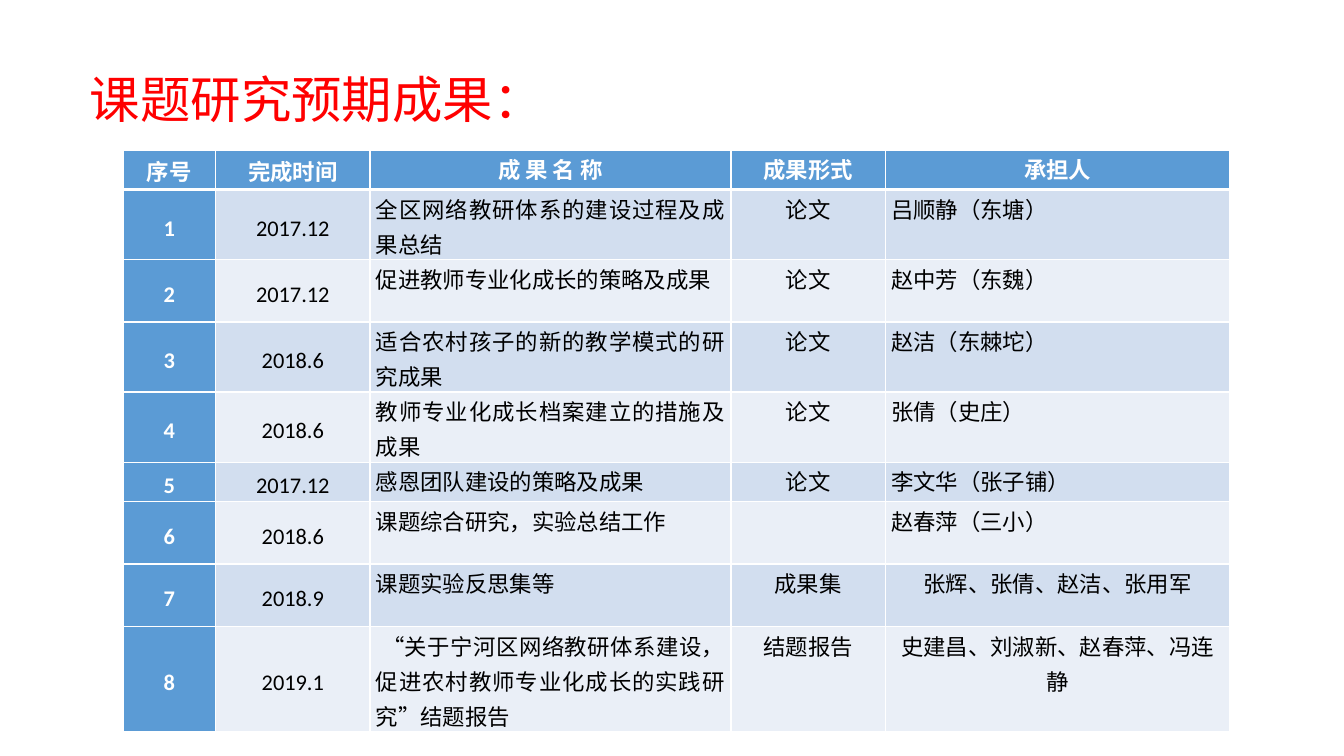
from lxml import etree
from pptx import Presentation
from pptx.dml.color import RGBColor
from pptx.enum.text import MSO_ANCHOR, MSO_AUTO_SIZE, PP_ALIGN
from pptx.oxml.ns import qn
from pptx.util import Inches, Pt

CENTER, JUSTIFY, LEFT = PP_ALIGN.CENTER, PP_ALIGN.JUSTIFY, PP_ALIGN.LEFT
TOP, MIDDLE = MSO_ANCHOR.TOP, MSO_ANCHOR.MIDDLE
FIT_SHAPE = MSO_AUTO_SIZE.SHAPE_TO_FIT_TEXT

RED = RGBColor(0xFF, 0x00, 0x00)
WHITE = RGBColor(0xFF, 0xFF, 0xFF)
BLACK = RGBColor(0x00, 0x00, 0x00)
BLUE = RGBColor(0x5B, 0x9B, 0xD5)
BANDS = RGBColor(0xD2, 0xDE, 0xEF), RGBColor(0xEA, 0xEF, 0xF7)

HEADINGS = "序号", "完成时间", "成 果 名 称", "成果形式", "承担人"
RESULTS = [
    ("2017.12", "全区网络教研体系的建设过程及成果总结", "论文", "吕顺静（东塘）"),
    ("2017.12", "促进教师专业化成长的策略及成果", "论文", "赵中芳（东魏）"),
    ("2018.6", "适合农村孩子的新的教学模式的研究成果", "论文", "赵洁（东棘坨）"),
    ("2018.6", "教师专业化成长档案建立的措施及成果", "论文", "张倩（史庄）"),
    ("2017.12", "感恩团队建设的策略及成果", "论文", "李文华（张子铺）"),
    ("2018.6", "课题综合研究，实验总结工作", "", "赵春萍（三小）"),
    ("2018.9", "课题实验反思集等", "成果集", "张辉、张倩、赵洁、张用军"),
    ("2019.1", " “关于宁河区网络教研体系建设，促进农村教师专业化成长的实践研究”结题报告",
     "结题报告", "史建昌、刘淑新、赵春萍、冯连静"),
]
COLUMN_SHARES = 6.9, 11.48, 26.86, 11.48, 25.66
ONE_LINE, TWO_LINES, THREE_LINES = 5.2, 8.27, 12.4
ROW_SHARES = [ONE_LINE, *[TWO_LINES] * 4, ONE_LINE, *[TWO_LINES] * 2, THREE_LINES]


class ResultsSlide:
    """Draws on one title-only slide, with lengths in percent of its size."""

    font_name = "Calibri"

    def __init__(self, deck):
        self.width, self.height = deck.slide_width, deck.slide_height
        self.slide = deck.slides.add_slide(deck.slide_layouts[5])

    def across(self, share):
        return round(self.width * share / 100)

    def down(self, share):
        return round(self.height * share / 100)

    def style(self, paragraph, size, color, align, bold=False):
        paragraph.alignment = align
        font = paragraph.font
        font.name, font.size, font.bold = self.font_name, Pt(size), bold
        font.color.rgb = color

    def title(self, wording, left, top, width, height):
        heading = self.slide.shapes.title
        heading.left, heading.top = self.across(left), self.down(top)
        heading.width, heading.height = self.across(width), self.down(height)
        frame = heading.text_frame
        frame.text = wording
        frame.word_wrap = False
        frame.auto_size = FIT_SHAPE
        frame.vertical_anchor = TOP
        self.style(frame.paragraphs[0], 36, RED, LEFT)

    def border(self, cell, side, points):
        properties = cell._tc.get_or_add_tcPr()
        line = etree.SubElement(properties, qn(f"a:ln{side}"), w=str(Pt(points)))
        fill = etree.SubElement(line, qn("a:solidFill"))
        etree.SubElement(fill, qn("a:srgbClr"), val=str(WHITE))

    def cell(self, cell, wording, row, column):
        is_header = row == 0
        is_label = is_header or column == 0
        for side in "LRTB":
            is_rule = (is_header and side == "B") or (row == 1 and side == "T")
            self.border(cell, side, 3 if is_rule else 1)
        cell.fill.solid()
        cell.fill.fore_color.rgb = BLUE if is_label else BANDS[(row - 1) % 2]
        if not wording:
            return
        cell.margin_left = cell.margin_right = Inches(0.06)
        cell.margin_top = cell.margin_bottom = 0
        cell.vertical_anchor = MIDDLE if column < 2 else TOP
        cell.text = wording
        paragraph = cell.text_frame.paragraphs[0]
        paragraph.line_spacing = Pt(25)
        single_author = column == 4 and "、" not in wording
        justified = not is_header and (column == 2 or single_author)
        self.style(paragraph, 16, WHITE if is_label else BLACK,
                   JUSTIFY if justified else CENTER, is_label)

    def table(self, rows, left, top, column_shares, row_shares):
        table = self.slide.shapes.add_table(
            len(rows), len(column_shares), self.across(left), self.down(top),
            self.across(sum(column_shares)), self.down(sum(row_shares))).table
        table.first_col = True
        for column, share in zip(table.columns, column_shares):
            column.width = self.across(share)
        for row, share in zip(table.rows, row_shares):
            row.height = self.down(share)
        for r, row in enumerate(rows):
            for c, wording in enumerate(row):
                self.cell(table.cell(r, c), wording, r, c)


def main():
    deck = Presentation()
    deck.slide_width, deck.slide_height = Inches(13.33), Inches(7.5)
    page = ResultsSlide(deck)
    numbered = [(str(n), *result) for n, result in enumerate(RESULTS, 1)]
    page.table([HEADINGS, *numbered], 9.15, 19.87, COLUMN_SHARES, ROW_SHARES)
    page.title("课题研究预期成果：", 5.93, 8.4, 35.63, 9.47)
    deck.save("out.pptx")


if __name__ == "__main__":
    main()
